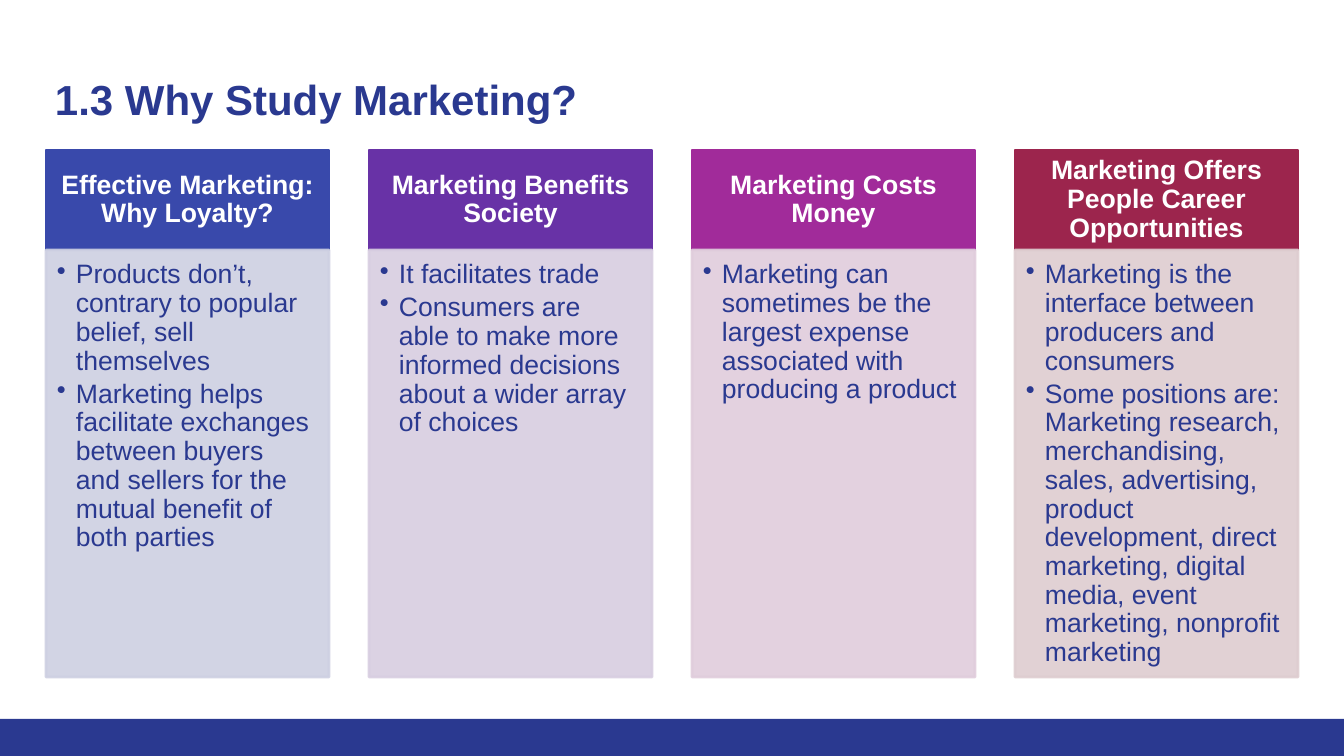
from lxml.etree import SubElement
from pptx import Presentation
from pptx.dml.color import RGBColor
from pptx.enum.shapes import MSO_SHAPE as SHAPE
from pptx.enum.text import MSO_ANCHOR as ANCHOR, PP_ALIGN as ALIGN
from pptx.oxml.ns import qn
from pptx.util import Emu, Pt

NAVY = RGBColor(0x2A, 0x39, 0x90)
WHITE = RGBColor(0xFF, 0xFF, 0xFF)
BLUE, PALE_BLUE = RGBColor(0x39, 0x49, 0xAB), RGBColor(0xCE, 0xD0, 0xE2)
VIOLET, PALE_VIOLET = RGBColor(0x68, 0x32, 0xA6), RGBColor(0xD8, 0xCE, 0xE1)
MAGENTA, PALE_MAGENTA = RGBColor(0xA1, 0x2B, 0x9A), RGBColor(0xE0, 0xCD, 0xDC)
CRIMSON, PALE_CRIMSON = RGBColor(0x9C, 0x25, 0x4D), RGBColor(0xDE, 0xCD, 0xD0)

WIDTH, HEIGHT = 1344, 756
LEFT, PITCH, COLUMN_W = 46, 323, 283
HEAD_TOP, HEAD_H, BODY_H = 150, 100, 427
INDENT = 19

REASONS = [
    ("Effective Marketing: Why Loyalty?", BLUE, PALE_BLUE,
     ["Products don’t, contrary to popular belief, sell themselves",
      "Marketing helps facilitate exchanges between buyers and sellers "
      "for the mutual benefit of both parties"]),
    ("Marketing Benefits Society", VIOLET, PALE_VIOLET,
     ["It facilitates trade",
      "Consumers are able to make more informed decisions about a wider "
      "array of choices"]),
    ("Marketing Costs Money", MAGENTA, PALE_MAGENTA,
     ["Marketing can sometimes be the largest expense associated with "
      "producing a product"]),
    ("Marketing Offers People Career Opportunities", CRIMSON, PALE_CRIMSON,
     ["Marketing is the interface between producers and consumers",
      "Some positions are: Marketing research, merchandising, sales, "
      "advertising, product development, direct marketing, digital media, "
      "event marketing, nonprofit marketing"]),
]


def px(n):
    return Emu(round(n * 914400 / 100.8))


def write(sp, lines, size=19, color=NAVY, bold=False, align=ALIGN.LEFT,
          anchor=ANCHOR.TOP, insets=(10, 10, 10, 10), spacing=1.0,
          after=0, bullet=False):
    """Fill a shape with paragraphs in one format."""
    tf = sp.text_frame
    tf.word_wrap = True
    tf.vertical_anchor = anchor
    tf.margin_left, tf.margin_top, tf.margin_right, tf.margin_bottom = map(px, insets)
    for i, line in enumerate(lines):
        p = tf.add_paragraph() if i else tf.paragraphs[0]
        p.alignment, p.line_spacing, p.space_after = align, spacing, Pt(after)
        if bullet:
            pPr = p._p.get_or_add_pPr()
            pPr.set("marL", str(px(INDENT)))
            pPr.set("indent", str(-px(INDENT)))
            SubElement(pPr, qn("a:buChar")).set("char", "•")
        r = p.add_run()
        r.text = line
        r.font.name, r.font.size, r.font.bold = "Arial", Pt(size), bold
        r.font.color.rgb = color


class Deck:
    font_color = NAVY

    def __init__(self):
        self.prs = Presentation()
        self.prs.slide_width, self.prs.slide_height = px(WIDTH), px(HEIGHT)
        self.s = self.prs.slides.add_slide(self.prs.slide_layouts[6])

    def text(self, x, y, w, h, lines, **fmt):
        sp = self.s.shapes.add_textbox(px(x), px(y), px(w), px(h))
        write(sp, lines, **fmt)
        return sp

    def rect(self, x, y, w, h, fill, line=True, opacity=100):
        sp = self.s.shapes.add_shape(SHAPE.RECTANGLE, px(x), px(y), px(w), px(h))
        sp.shadow.inherit = False
        sp.fill.solid()
        sp.fill.fore_color.rgb = fill
        if line:
            sp.line.color.rgb = fill
            sp.line.width = Pt(2)
        else:
            sp.line.fill.background()
        if opacity < 100:
            for clr in sp._element.spPr.iter(qn("a:srgbClr")):
                SubElement(clr, qn("a:alpha")).set("val", str(opacity * 1000))
        return sp

    def column(self, x, heading, dark, pale, points):
        head = self.rect(x, HEAD_TOP, COLUMN_W, HEAD_H, dark)
        write(head, [heading], color=WHITE, bold=True, align=ALIGN.CENTER,
              anchor=ANCHOR.MIDDLE, insets=(15, 8, 15, 8), spacing=0.9)
        body = self.rect(x, HEAD_TOP + HEAD_H, COLUMN_W, BODY_H, pale, opacity=90)
        write(body, points, insets=(11, 11, 15, 17), spacing=0.9, after=3,
              bullet=True)


def main():
    deck = Deck()

    # Footer band and title
    deck.rect(0, 719, WIDTH, 37, NAVY, line=False)
    deck.text(45, 60, 1252, 90, ["1.3 Why Study Marketing?"], size=30, bold=True,
              insets=(10, 14, 10, 10))

    # One column per reason
    for i, reason in enumerate(REASONS):
        deck.column(LEFT + i * PITCH, *reason)

    deck.prs.save("out.pptx")


if __name__ == "__main__":
    main()
